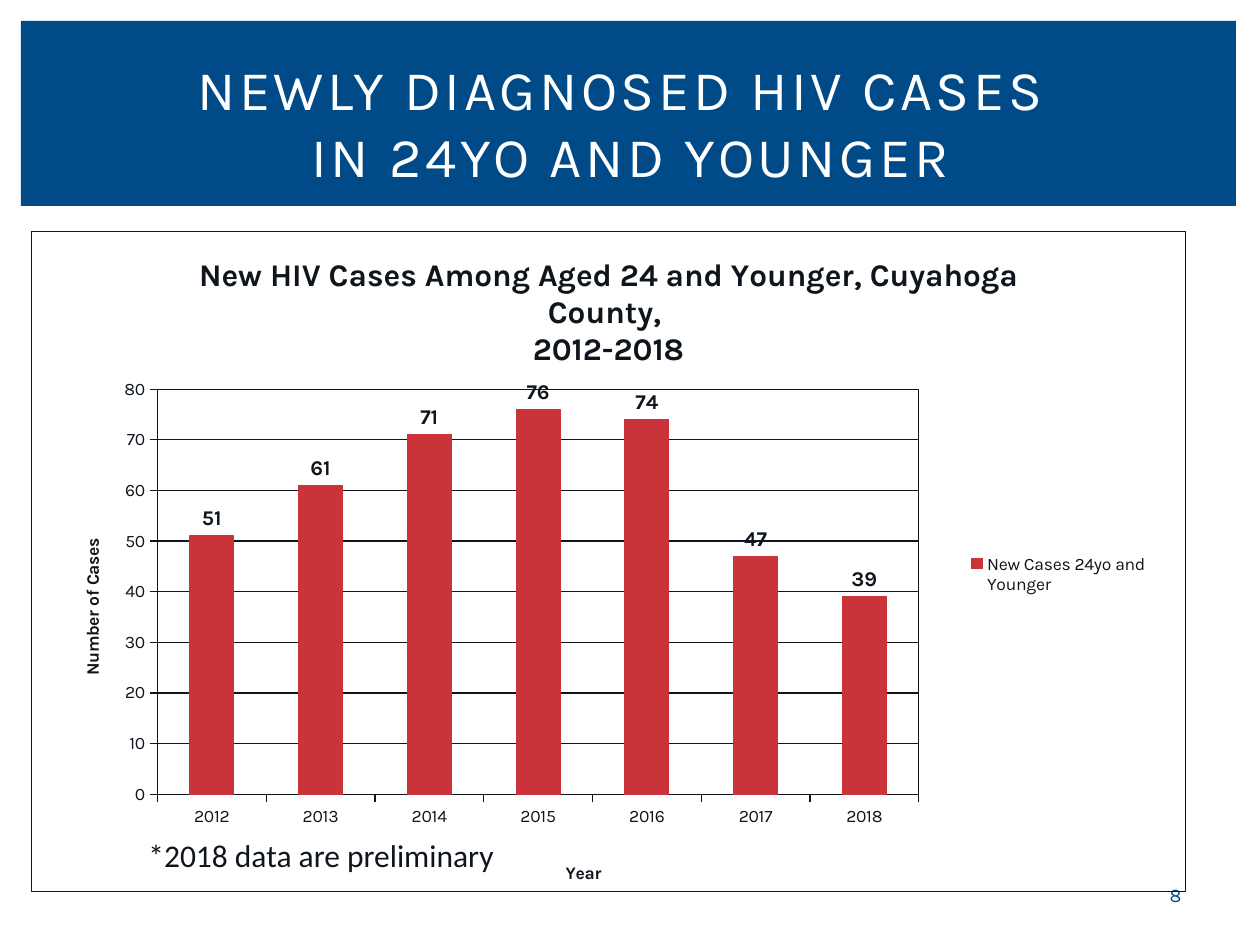
"""Build a slide with a column chart of new HIV cases by year."""
import lxml.etree
import pptx
import pptx.chart.data
import pptx.dml.color
import pptx.enum.chart
import pptx.enum.shapes
import pptx.enum.text
import pptx.oxml
import pptx.oxml.ns
import pptx.util

RGB = pptx.dml.color.RGBColor
BLUE = RGB(0x00, 0x4B, 0x87)
RED = RGB(0xCB, 0x33, 0x3B)
INK = RGB(0x0F, 0x15, 0x1C)
WHITE = RGB(0xFF, 0xFF, 0xFF)
SCALE = 914400 / 126
THIN = pptx.util.Pt(0.75)
ALIGN = pptx.enum.text.PP_ALIGN
qn = pptx.oxml.ns.qn


def px(*nums):
    """Turn px lengths into EMU."""
    return [pptx.util.Emu(round(num * SCALE)) for num in nums]


def write(frame, text, size=10, color=INK, font="Karla", bold=None, align=None, gap=None):
    """Fill a text frame with one formatted paragraph."""
    par = frame.paragraphs[0]
    par.text = text
    par.alignment = align
    for run in par.runs:
        run.font.size = pptx.util.Pt(size)
        run.font.name = font
        run.font.bold = bold
        run.font.color.rgb = color
        if gap:
            run.font._element.set("spc", str(gap))


def paint(line, color):
    """Give a line its colour and the thin width."""
    line.color.rgb = color
    line.width = THIN


def edge():
    """Return shape properties with no fill and a thin outline."""
    return pptx.oxml.parse_xml(
        f'<c:spPr {pptx.oxml.ns.nsdecls("c", "a")}><a:noFill/><a:ln w="{THIN}">'
        f'<a:solidFill><a:srgbClr val="{INK}"/></a:solidFill></a:ln></c:spPr>')


def place(node, inner=False, **spots):
    """Set the manual layout of a chart part in fractions of the chart."""
    old = node.find(qn("c:layout"))
    if old is not None:
        node.remove(old)
    box = lxml.etree.Element(qn("c:layout"))
    man = lxml.etree.SubElement(box, qn("c:manualLayout"))
    if inner:
        lxml.etree.SubElement(man, qn("c:layoutTarget")).set("val", "inner")
    for key in "xy":
        lxml.etree.SubElement(man, qn(f"c:{key}Mode")).set("val", "edge")
    for key, val in spots.items():
        lxml.etree.SubElement(man, qn(f"c:{key}")).set("val", f"{val:.4f}")
    prior = node.find(qn("c:tx"))
    if prior is None:
        prior = node.find(qn("c:legendPos"))
    if prior is None:
        node.insert(0, box)
    else:
        prior.addnext(box)


class Deck:
    """Hold the current slide and its style."""

    def __init__(self):
        """Start a deck with one title-only slide."""
        self.show = pptx.Presentation()
        self.show.slide_width, self.show.slide_height = px(1260, 945)
        self.slide = self.show.slides.add_slide(self.show.slide_layouts[5])

    def banner(self, *box):
        """Add a plain blue band."""
        kind = pptx.enum.shapes.MSO_SHAPE.RECTANGLE
        band = self.slide.shapes.add_shape(kind, *px(*box))
        band.shadow.inherit = False
        band.fill.solid()
        band.fill.fore_color.rgb = BLUE
        band.line.fill.background()

    def title(self, text, *box):
        """Format the title and bring it to the front."""
        head = self.slide.shapes.title
        self.slide.shapes.element.append(head.element)
        head.left, head.top, head.width, head.height = px(*box)
        head.text_frame.vertical_anchor = pptx.enum.text.MSO_ANCHOR.MIDDLE
        head.text_frame.auto_size = pptx.enum.text.MSO_AUTO_SIZE.NONE
        write(head.text_frame, text, size=32, color=WHITE, align=ALIGN.CENTER, gap=200)

    def label(self, text, *box, middle=False, **style):
        """Add a wrapped text box."""
        frame = self.slide.shapes.add_textbox(*px(*box)).text_frame
        frame.word_wrap = True
        if middle:
            frame.vertical_anchor = pptx.enum.text.MSO_ANCHOR.MIDDLE
        write(frame, text, **style)

    def chart(self, title, name, cases, *box):
        """Add the column chart."""
        enum = pptx.enum.chart
        data = pptx.chart.data.CategoryChartData()
        data.categories = list(cases)
        data.add_series(name, list(cases.values()))
        kind = enum.XL_CHART_TYPE.COLUMN_CLUSTERED
        chart = self.slide.shapes.add_chart(kind, *px(*box), data).chart
        chart.font.size = pptx.util.Pt(10)
        chart.font.name = "Karla"
        chart.font.color.rgb = INK
        chart.has_title = True
        write(chart.chart_title.text_frame, title, size=18, bold=True)

        plot = chart.plots[0]
        plot.gap_width = 150
        plot.vary_by_categories = False
        bars = plot.series[0]
        bars.format.fill.solid()
        bars.format.fill.fore_color.rgb = RED
        paint(bars.format.line, RED)
        tags = bars.data_labels
        tags.show_value = True
        tags.position = enum.XL_LABEL_POSITION.OUTSIDE_END
        tags.font.size = pptx.util.Pt(12)
        tags.font.name = "Karla"
        tags.font.bold = True
        tags.font.color.rgb = INK

        axes = ((chart.category_axis, "Year", 0.46, 0.95),
                (chart.value_axis, "Number of Cases", 0.04, 0.46))
        for axis, text, left, top in axes:
            write(axis.axis_title.text_frame, text, bold=True)
            place(axis.axis_title._element, x=left, y=top)
            axis.major_tick_mark = enum.XL_TICK_MARK.OUTSIDE
            axis.minor_tick_mark = enum.XL_TICK_MARK.NONE
            paint(axis.format.line, INK)
        scale = chart.value_axis
        scale.minimum_scale, scale.maximum_scale, scale.major_unit = 0, 80, 10
        scale.has_major_gridlines = True
        paint(scale.major_gridlines.format.line, INK)

        chart.has_legend = True
        chart.legend.position = enum.XL_LEGEND_POSITION.RIGHT
        chart.legend.include_in_layout = False
        place(chart.legend._element, x=0.8, y=0.48, w=0.18, h=0.08)
        root = chart.element.find(qn("c:chart"))
        root.addnext(edge())
        area = root.find(qn("c:plotArea"))
        place(area, inner=True, x=0.109, y=0.239, w=0.66, h=0.614)
        area.append(edge())


def main():
    """Build and save the deck."""
    deck = Deck()
    deck.banner(21, 21, 1215, 185)
    deck.label("8", 1135, 876, 81, 38, middle=True, size=11, color=BLUE, align=ALIGN.CENTER)
    deck.title("NEWLY DIAGNOSED HIV CASES \vIN 24YO AND YOUNGER", 53, 49, 1155, 145)
    cases = dict(zip(map(str, range(2012, 2019)), (51, 61, 71, 76, 74, 47, 39)))
    deck.chart("New HIV Cases Among Aged 24 and Younger, Cuyahoga County, \v2012-2018",
               "New Cases 24yo and Younger", cases, 31, 231, 1155, 661)
    deck.label("*2018 data are preliminary", 136, 830, 546, 53, size=18, font="Calibri")
    deck.show.save("out.pptx")


if __name__ == "__main__":
    main()
